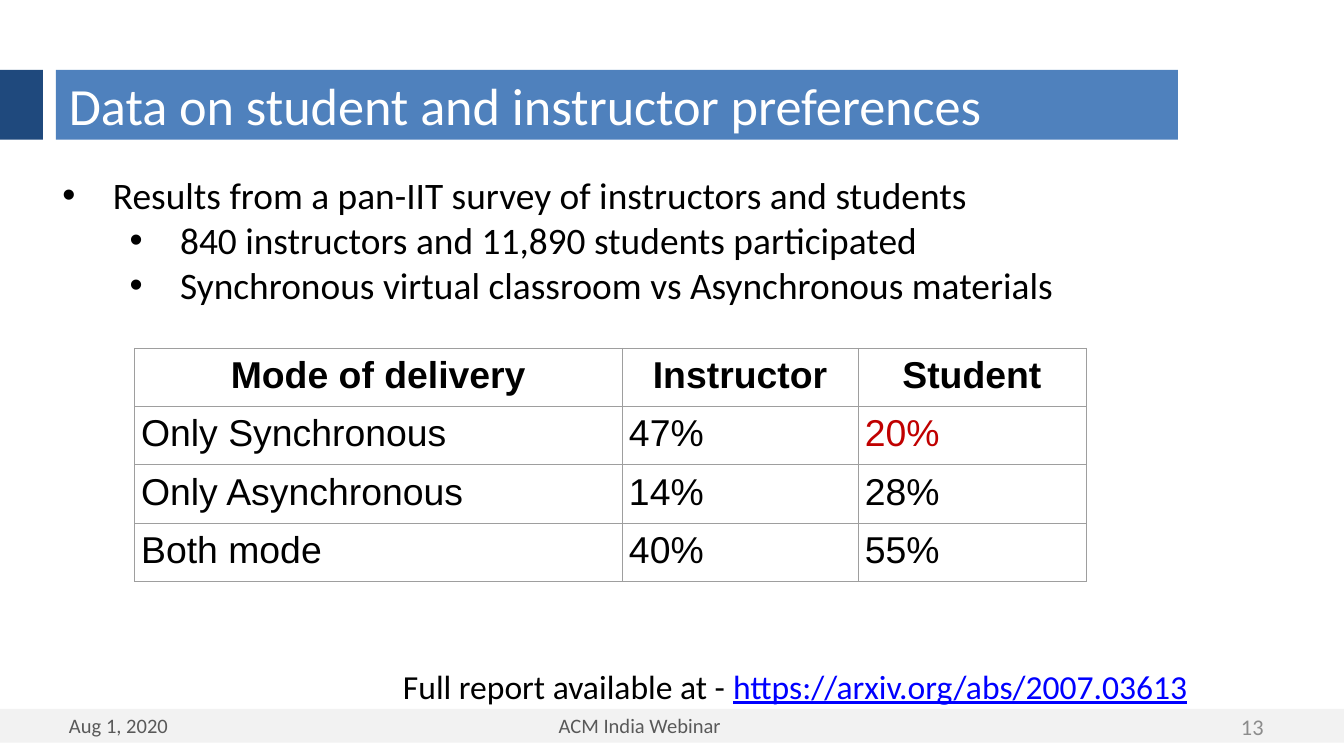
from lxml import etree
from pptx import Presentation
from pptx import util as u
from pptx.dml.color import RGBColor
from pptx.enum import shapes, text
from pptx.oxml.ns import qn

PX = 4572  # EMU per px, at 200 px to the inch

WHITE = RGBColor(0xFF, 0xFF, 0xFF)
BLACK = RGBColor(0x00, 0x00, 0x00)
BLUE = RGBColor(0x4F, 0x81, 0xBD)
NAVY = RGBColor(0x1F, 0x49, 0x7D)
PALE = RGBColor(0xF2, 0xF2, 0xF2)
FOOTER_GREY = RGBColor(0x59, 0x59, 0x59)
NUMBER_GREY = RGBColor(0x8C, 0x8C, 0x8C)
LINK = RGBColor(0x00, 0x00, 0xFF)
RED = RGBColor(0xC0, 0x00, 0x00)
RULE = "9E9E9E"

LEFT, CENTER, RIGHT = text.PP_ALIGN.LEFT, text.PP_ALIGN.CENTER, text.PP_ALIGN.RIGHT
TOP, MIDDLE = text.MSO_ANCHOR.TOP, text.MSO_ANCHOR.MIDDLE

BULLETS = [
    (0, "Results from a pan-IIT survey of instructors and students"),
    (1, "840 instructors and 11,890 students participated"),
    (1, "Synchronous virtual classroom vs Asynchronous materials"),
]
COLUMNS = [726, 351, 339]
ROWS = [
    ["Mode of delivery", "Instructor", "Student"],
    ["Only Synchronous", "47%", "20%"],
    ["Only Asynchronous", "14%", "28%"],
    ["Both mode", "40%", "55%"],
]
HIGHLIGHT = (1, 2)


def px(*lengths):
    return [u.Emu(length * PX) for length in lengths]


def add_bar(page, left, top, width, height, color):
    bar = page.shapes.add_shape(shapes.MSO_SHAPE.RECTANGLE, *px(left, top, width, height))
    bar.shadow.inherit = False
    bar.fill.solid()
    bar.fill.fore_color.rgb = color
    bar.line.fill.background()


def add_frame(page, left, top, width, height, insets=(20, 10, 20, 10), anchor=TOP):
    frame = page.shapes.add_textbox(*px(left, top, width, height)).text_frame
    frame.word_wrap = True
    frame.vertical_anchor = anchor
    (frame.margin_left, frame.margin_top,
     frame.margin_right, frame.margin_bottom) = px(*insets)
    return frame


def add_span(para, words, size, color, font="Calibri", bold=False, underline=False):
    span = para.add_run()
    span.text = words
    span.font.name = font
    span.font.size = u.Pt(size)
    span.font.color.rgb = color
    span.font.bold = bold
    span.font.underline = underline


def add_line(frame, words, size, color, align=LEFT):
    para = frame.paragraphs[0]
    para.alignment = align
    add_span(para, words, size, color)


def set_indent(para, level, margin, first):
    para.level = level
    props = para._p.get_or_add_pPr()
    props.set("marL", str(margin * PX))
    props.set("indent", str(first * PX))
    return props


def add_title(page, left, top, width, height):
    add_bar(page, 0, top, 64, height, NAVY)
    add_bar(page, left, top, width, height, BLUE)
    frame = add_frame(page, left, top, width - 36, height - 2, anchor=MIDDLE)
    add_line(frame, "Data on student and instructor preferences", 28, WHITE)


def add_body(page, left, top, width, height):
    """Bullets at the top, the report address at the foot."""
    frame = add_frame(page, left, top, width, height, (10, 10, 0, 10))
    for index, (level, words) in enumerate(BULLETS):
        para = frame.add_paragraph() if index else frame.paragraphs[0]
        props = set_indent(para, level, 75 + 100 * level, -75)
        etree.SubElement(props, qn("a:buFont")).set("typeface", "Arial")
        etree.SubElement(props, qn("a:buChar")).set("char", "•")
        add_span(para, words, 20, BLACK)
    report = frame.add_paragraph()
    set_indent(report, 1, 100, 0)
    report.alignment = RIGHT
    report.space_before = u.Pt(192)
    add_span(report, "Full report available at - ", 18, BLACK)
    add_span(report, "https://arxiv.org/abs/2007.03613", 18, LINK, underline=True)


def set_borders(cell):
    """Rule all four sides; the lines must come before the fill."""
    props = cell._tc.get_or_add_tcPr()
    for index, side in enumerate(("lnL", "lnR", "lnT", "lnB")):
        line = etree.Element(qn(f"a:{side}"), w=str(u.Pt(0.38)))
        fill = etree.SubElement(line, qn("a:solidFill"))
        etree.SubElement(fill, qn("a:srgbClr")).set("val", RULE)
        props.insert(index, line)


def add_survey_table(page, left, top, height, row_height):
    """Rows start at row_height and grow to fit their text."""
    box = px(left, top, sum(COLUMNS), height)
    holder = page.shapes.add_table(len(ROWS), len(COLUMNS), *box)
    table = holder.table
    for column, width in zip(table.columns, COLUMNS):
        column.width = u.Emu(width * PX)
    for r, row in enumerate(ROWS):
        table.rows[r].height = u.Emu(row_height * PX)
        for c, words in enumerate(row):
            cell = table.cell(r, c)
            cell.fill.background()
            set_borders(cell)
            (cell.margin_left, cell.margin_top,
             cell.margin_right, cell.margin_bottom) = px(10, 10, 10, 10)
            para = cell.text_frame.paragraphs[0]
            para.alignment = LEFT if r else CENTER
            color = RED if (r, c) == HIGHLIGHT else BLACK
            add_span(para, words, 20, color, font="Arial", bold=r == 0)
    holder.height = u.Emu(height * PX)


def add_footer(page, left, top, width, height):
    add_bar(page, left, top, width, height, PALE)
    date = add_frame(page, left + 83, top - 4, 284, 48)
    add_line(date, "Aug 1, 2020", 11, FOOTER_GREY)
    event = add_frame(page, left + 483, top - 4, 938, 48)
    add_line(event, "ACM India Webinar", 11, FOOTER_GREY, CENTER)
    number = add_frame(page, left + 1775, top - 3, 125, 60, anchor=MIDDLE)
    add_line(number, "13", 12, NUMBER_GREY, RIGHT)


def main():
    deck = Presentation()
    deck.slide_width, deck.slide_height = px(2000, 1125)
    page = deck.slides.add_slide(deck.slide_layouts[6])
    add_footer(page, 0, 1055, 2000, 50)
    add_title(page, 83, 104, 1670, 104)
    add_body(page, 83, 247, 1684, 804)
    add_survey_table(page, 200, 518, 350, 42)
    deck.save("out.pptx")


if __name__ == "__main__":
    main()
